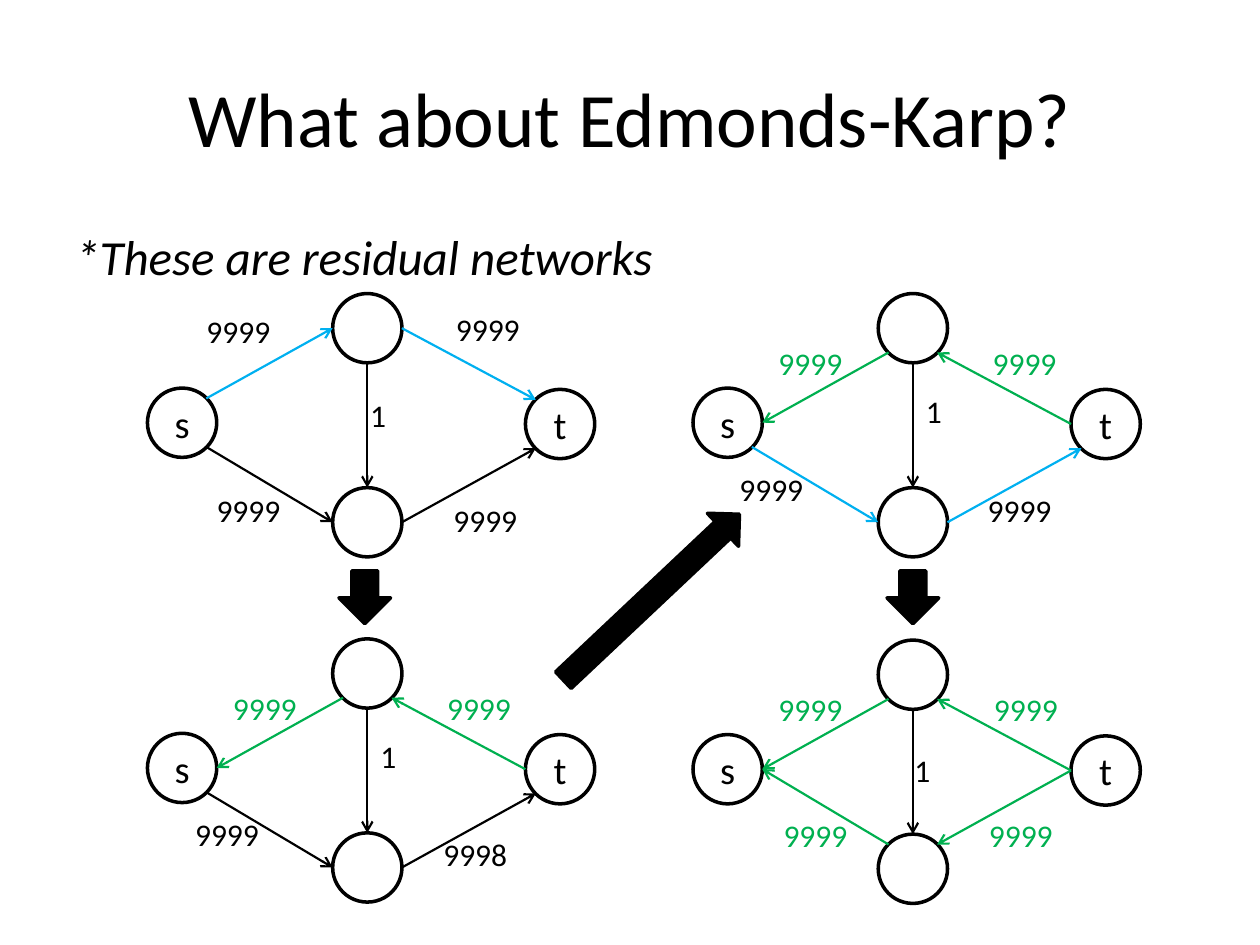
from dataclasses import dataclass

from lxml.etree import SubElement
from pptx import Presentation
from pptx.dml.color import RGBColor
from pptx.enum.shapes import MSO_CONNECTOR as Connector, MSO_SHAPE as Shape
from pptx.enum.text import MSO_ANCHOR as Anchor, MSO_AUTO_SIZE as AutoSize, PP_ALIGN as Align
from pptx.oxml.ns import qn
from pptx.util import Inches, Pt

COLORS = {"black": "000000", "blue": "00B0F0", "green": "00B050"}
FONT = "Calibri"
NODE = 0.55
NODES = {"s": (0, 0.75), "top": (1.47, 0), "bottom": (1.47, 1.54), "t": (3, 0.76)}
NAMED = ("s", "t")
DIAGONAL = 0.35
SITES = {
    "left": (-0.5, 0), "right": (0.5, 0), "up": (0, -0.5), "down": (0, 0.5),
    "up left": (-DIAGONAL, -DIAGONAL), "up right": (DIAGONAL, -DIAGONAL),
    "down left": (-DIAGONAL, DIAGONAL), "down right": (DIAGONAL, DIAGONAL),
}
ROUTES = {
    ("s", "top"): ("up right", "left"),
    ("s", "bottom"): ("down right", "left"),
    ("top", "t"): ("right", "up left"),
    ("bottom", "t"): ("right", "down left"),
    ("top", "s"): ("down left", "right"),
    ("bottom", "s"): ("up left", "right"),
    ("t", "top"): ("left", "down right"),
    ("t", "bottom"): ("left", "up right"),
    ("top", "bottom"): ("down", "up"),
}


@dataclass
class Edge:
    start: str
    end: str
    capacity: str
    label_at: tuple[float, float]
    color: str = "black"
    label_color: str = "black"


@dataclass
class Network:
    left: float
    top: float
    edges: list[Edge]


@dataclass
class BlockArrow:
    shape: Shape
    left: float
    top: float
    width: float
    height: float
    rotation: float = 0


def reverse(start: str, end: str, label_at: tuple[float, float]) -> Edge:
    return Edge(start, end, "9999", label_at, "green", "green")


NETWORKS = [
    Network(1.17, 2.33, [
        Edge("s", "top", "9999", (0.37, 0.1), "blue"),
        Edge("s", "bottom", "9999", (0.45, 1.52)),
        Edge("top", "t", "9999", (2.35, 0.08), "blue"),
        Edge("bottom", "t", "9999", (2.33, 1.6)),
        Edge("top", "bottom", "1", (1.67, 0.76)),
    ]),
    Network(1.17, 5.07, [
        Edge("s", "bottom", "9999", (0.28, 1.35)),
        Edge("bottom", "t", "9998", (2.25, 1.51)),
        reverse("top", "s", (0.58, 0.35)),
        reverse("t", "top", (2.28, 0.35)),
        Edge("top", "bottom", "1", (1.75, 0.73)),
    ]),
    Network(5.5, 2.33, [
        Edge("s", "bottom", "9999", (0.27, 1.35), "blue"),
        Edge("bottom", "t", "9999", (2.24, 1.52), "blue"),
        reverse("top", "s", (0.58, 0.35)),
        reverse("t", "top", (2.28, 0.35)),
        Edge("top", "bottom", "1", (1.75, 0.73)),
    ]),
    Network(5.5, 5.08, [
        reverse("top", "s", (0.58, 0.35)),
        reverse("bottom", "s", (0.62, 1.35)),
        reverse("t", "top", (2.29, 0.35)),
        reverse("t", "bottom", (2.25, 1.35)),
        Edge("top", "bottom", "1", (1.66, 0.83)),
    ]),
]
BLOCK_ARROWS = [
    BlockArrow(Shape.DOWN_ARROW, 2.69, 4.53, 0.41, 0.42),
    BlockArrow(Shape.DOWN_ARROW, 7.04, 4.53, 0.41, 0.42),
    BlockArrow(Shape.RIGHT_ARROW, 4.21, 4.56, 1.92, 0.36, 316.7),
]


def rgb(name: str) -> RGBColor:
    return RGBColor.from_string(COLORS[name])


def write(sp, text: str, *, size: float, color: str = "black", align=Align.LEFT,
          anchor=Anchor.TOP, italic: bool = False, wrap: bool = True) -> None:
    tf = sp.text_frame
    tf.word_wrap = wrap
    tf.auto_size = AutoSize.NONE if wrap else AutoSize.SHAPE_TO_FIT_TEXT
    tf.vertical_anchor = anchor
    p = tf.paragraphs[0]
    p.alignment = align
    r = p.add_run()
    r.text = text
    r.font.name = FONT
    r.font.size = Pt(size)
    r.font.italic = italic
    r.font.color.rgb = rgb(color)


def add_text(shapes, text: str, left: float, top: float, width: float, height: float, **fmt) -> None:
    sp = shapes.add_textbox(Inches(left), Inches(top), Inches(width), Inches(height))
    write(sp, text, **fmt)


def outline(sp, width: float, color: str = "black") -> None:
    sp.line.color.rgb = rgb(color)
    sp.line.width = Pt(width)


def add_node(shapes, net: Network, name: str) -> None:
    x, y = NODES[name]
    sp = shapes.add_shape(Shape.OVAL, Inches(net.left + x), Inches(net.top + y),
                          Inches(NODE), Inches(NODE))
    sp.shadow.inherit = False
    sp.fill.background()
    outline(sp, 2)
    if name in NAMED:
        write(sp, name, size=22, align=Align.CENTER, anchor=Anchor.MIDDLE)


def site(net: Network, node: str, side: str) -> tuple[Inches, Inches]:
    x, y = NODES[node]
    dx, dy = SITES[side]
    return Inches(net.left + x + NODE * (0.5 + dx)), Inches(net.top + y + NODE * (0.5 + dy))


def add_edge(shapes, net: Network, edge: Edge) -> None:
    start_side, end_side = ROUTES[edge.start, edge.end]
    line = shapes.add_connector(Connector.STRAIGHT, *site(net, edge.start, start_side),
                                *site(net, edge.end, end_side))
    outline(line, 1.25, edge.color)
    SubElement(line.line._get_or_add_ln(), qn("a:tailEnd"), type="arrow")
    SubElement(line._element.spPr, qn("a:effectLst"))
    x, y = edge.label_at
    width = 0.33 if len(edge.capacity) == 1 else 0.71
    add_text(shapes, edge.capacity, net.left + x, net.top + y, width, 0.4,
             size=18, color=edge.label_color, wrap=False)


def add_network(s, net: Network) -> None:
    shapes = s.shapes.add_group_shape().shapes
    for name in NODES:
        add_node(shapes, net, name)
    for edge in net.edges:
        add_edge(shapes, net, edge)


def add_block_arrow(s, arrow: BlockArrow) -> None:
    sp = s.shapes.add_shape(arrow.shape, Inches(arrow.left), Inches(arrow.top),
                            Inches(arrow.width), Inches(arrow.height))
    sp.rotation = arrow.rotation
    sp.shadow.inherit = False
    sp.fill.solid()
    sp.fill.fore_color.rgb = rgb("black")
    outline(sp, 2)


def main() -> None:
    prs = Presentation()
    prs.slide_width, prs.slide_height = Inches(10), Inches(7.5)
    s = prs.slides.add_slide(prs.slide_layouts[6])
    add_text(s.shapes, "What about Edmonds-Karp?", 0.5, 0.3, 9, 1.25,
             size=44, align=Align.CENTER, anchor=Anchor.MIDDLE)
    add_text(s.shapes, "*These are residual networks", 0.5, 1.75, 9, 0.58, size=28, italic=True)
    for net in NETWORKS:
        add_network(s, net)
    for arrow in BLOCK_ARROWS:
        add_block_arrow(s, arrow)
    prs.save("out.pptx")


if __name__ == "__main__":
    main()
